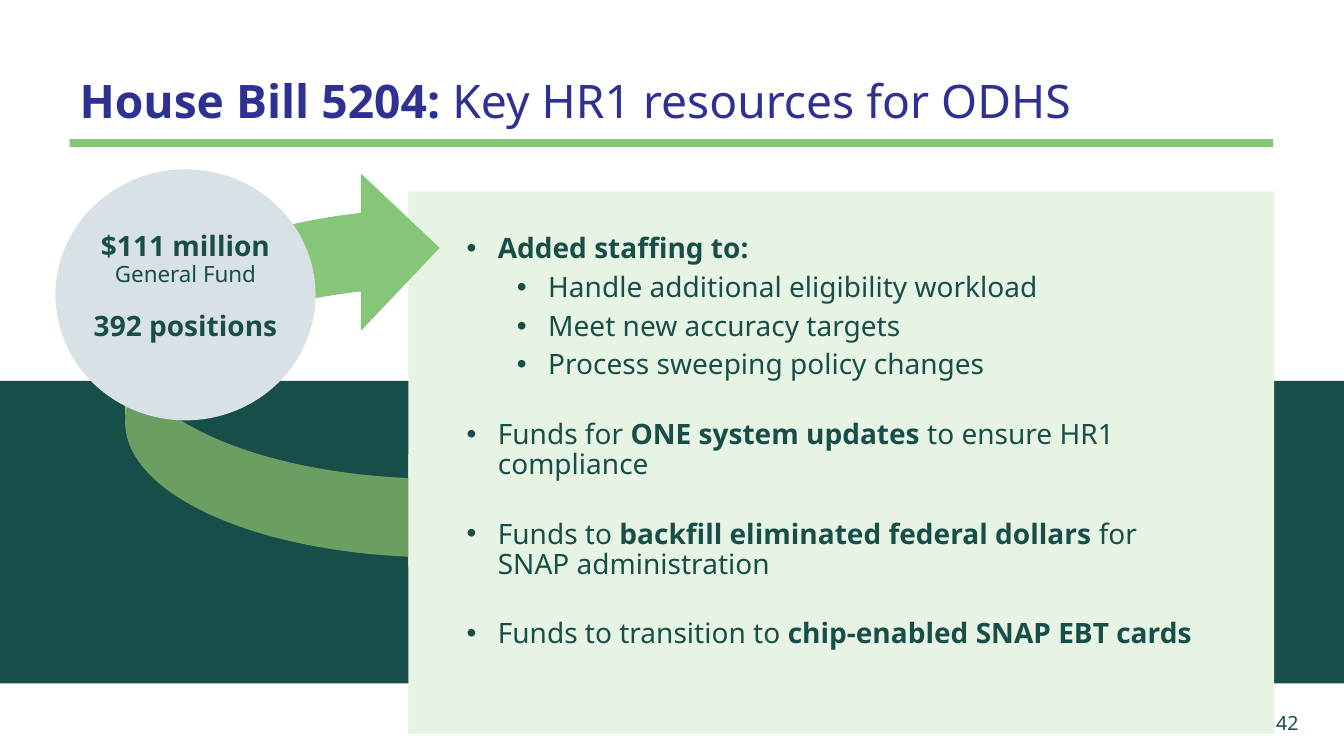
from dataclasses import dataclass

from lxml import etree
from pptx import Presentation
from pptx.dml.color import RGBColor
from pptx.enum.shapes import MSO_SHAPE
from pptx.enum.text import MSO_ANCHOR, PP_ALIGN
from pptx.oxml.ns import qn
from pptx.util import Inches, Pt

RECTANGLE, OVAL = MSO_SHAPE.RECTANGLE, MSO_SHAPE.OVAL
CURVED_ARROW = MSO_SHAPE.CURVED_RIGHT_ARROW
TOP, MIDDLE, BOTTOM = MSO_ANCHOR.TOP, MSO_ANCHOR.MIDDLE, MSO_ANCHOR.BOTTOM
LEFT, CENTER, RIGHT = PP_ALIGN.LEFT, PP_ALIGN.CENTER, PP_ALIGN.RIGHT

FONT = "Noto Sans"
NAVY = RGBColor(0x2E, 0x31, 0x92)
TEAL = RGBColor(0x18, 0x4E, 0x49)
GREEN = RGBColor(0x86, 0xC6, 0x79)
MINT = RGBColor(0xE7, 0xF4, 0xE4)
MIST = RGBColor(0xD8, 0xE1, 0xE5)

WIDTH, HEIGHT = Inches(13.33), Inches(7.5)
COLUMN, ROW = WIDTH / 100, HEIGHT / 100
BODY_SIZE, SMALL_SIZE = 20, 16
TIGHT, LOOSE = 6, 28

BULLETS = [
    (0, TIGHT, [("Added staffing to:", True)]),
    (1, TIGHT, [("Handle additional eligibility workload", False)]),
    (1, TIGHT, [("Meet new accuracy targets", False)]),
    (1, LOOSE, [("Process sweeping policy changes", False)]),
    (0, LOOSE, [("Funds for ", False), ("ONE system updates ", True),
                ("to ensure HR1 compliance", False)]),
    (0, LOOSE, [("Funds to ", False), ("backfill eliminated federal dollars ", True),
                ("for SNAP administration", False)]),
    (0, LOOSE, [("Funds to transition to ", False),
                ("chip-enabled SNAP EBT cards", True)]),
]


@dataclass
class Box:
    """A region measured in grid columns and rows."""
    left: float
    top: float
    width: float
    height: float

    def inner(self, across, down, width, height):
        """Return a box offset from this one's top left corner."""
        return Box(self.left + across, self.top + down, width, height)

    def lengths(self):
        """Return left, top, width and height in slide units."""
        return (round(self.left * COLUMN), round(self.top * ROW),
                round(self.width * COLUMN), round(self.height * ROW))


def add_block(page, box, kind, color):
    """Add a flat filled shape without outline."""
    shape = page.shapes.add_shape(kind, *box.lengths())
    shape.shadow.inherit = False
    shape.fill.solid()
    shape.fill.fore_color.rgb = color
    shape.line.fill.background()
    return shape


def add_frame(page, box, anchor=TOP):
    """Add a wrapping text box and return its text frame."""
    frame = page.shapes.add_textbox(*box.lengths()).text_frame
    frame.word_wrap = True
    frame.vertical_anchor = anchor
    return frame


def next_para(frame, index, align=LEFT, after=0):
    """Return the paragraph at an index, adding it after the first."""
    para = frame.add_paragraph() if index else frame.paragraphs[0]
    para.alignment = align
    para.line_spacing = 0.9
    para.space_after = Pt(after)
    return para


def add_span(para, text, size=BODY_SIZE, bold=False, color=TEAL):
    """Add one styled run."""
    span = para.add_run()
    span.text = text
    span.font.name = FONT
    span.font.size = Pt(size)
    span.font.bold = bold
    span.font.color.rgb = color


def set_bullet(para, level):
    """Give a paragraph a hanging bullet for its level."""
    para.level = level
    properties = para._p.get_or_add_pPr()
    properties.set("marL", str(Inches(0.31 + 0.5 * level)))
    properties.set("indent", str(Inches(-0.31)))
    etree.SubElement(properties, qn("a:buFont")).set("typeface", "Arial")
    etree.SubElement(properties, qn("a:buChar")).set("char", "•")


def add_header(page, box):
    """Place the title and the rule below it."""
    add_block(page, box.inner(0, 12.8, box.width, 1.07), RECTANGLE, GREEN)
    frame = add_frame(page, box.inner(0, 0, box.width, 12), BOTTOM)
    para = next_para(frame, 0)
    add_span(para, "House Bill 5204: ", 33, True, NAVY)
    add_span(para, "Key HR1 resources for ODHS", 33, False, NAVY)


def add_page_number(page, box):
    """Place the slide number at the right."""
    para = next_para(add_frame(page, box, MIDDLE), 0, RIGHT)
    add_span(para, "42", 14)


def add_resources(page, box):
    """Place the panel with the bulleted resources."""
    add_block(page, box, RECTANGLE, MINT)
    frame = add_frame(page, box.inner(3.6, 5.07, 56.18, 70.53))
    for index, (level, after, spans) in enumerate(BULLETS):
        para = next_para(frame, index, after=after)
        set_bullet(para, level)
        for text, bold in spans:
            add_span(para, text, bold=bold)


def add_funding(page, box):
    """Place the funding circle and the arrow that curves behind it."""
    arrow = add_block(page, box.inner(5.18, 0, 23.4, 51.33), CURVED_ARROW, GREEN)
    arrow._element.spPr.find(qn("a:xfrm")).set("flipV", "1")
    add_block(page, box.inner(26.25, 37.73, 3.68, 14.93), RECTANGLE, MINT)
    add_block(page, box.inner(0, 0, 19.35, 33.2), OVAL, MIST)
    frame = add_frame(page, box.inner(0.75, 7.73, 17.85, 17.33))
    money = next_para(frame, 0, CENTER, 18)
    add_span(money, "$111 million ", bold=True)
    add_span(money, "General Fund", SMALL_SIZE)
    positions = next_para(frame, 1, CENTER, TIGHT)
    add_span(positions, "392 positions", bold=True)


def main():
    """Build the slide and save the deck."""
    deck = Presentation()
    deck.slide_width, deck.slide_height = WIDTH, HEIGHT
    page = deck.slides.add_slide(deck.slide_layouts[6])
    add_page_number(page, Box(78.68, 94.4, 18.68, 2.67))
    add_block(page, Box(0, 50.4, 100, 40), RECTANGLE, TEAL)
    add_header(page, Box(5.18, 5.6, 89.55, 13.87))
    add_resources(page, Box(30.38, 25.33, 64.42, 71.73))
    add_funding(page, Box(4.13, 22.4, 29.93, 52.67))
    deck.save("out.pptx")


if __name__ == "__main__":
    main()
